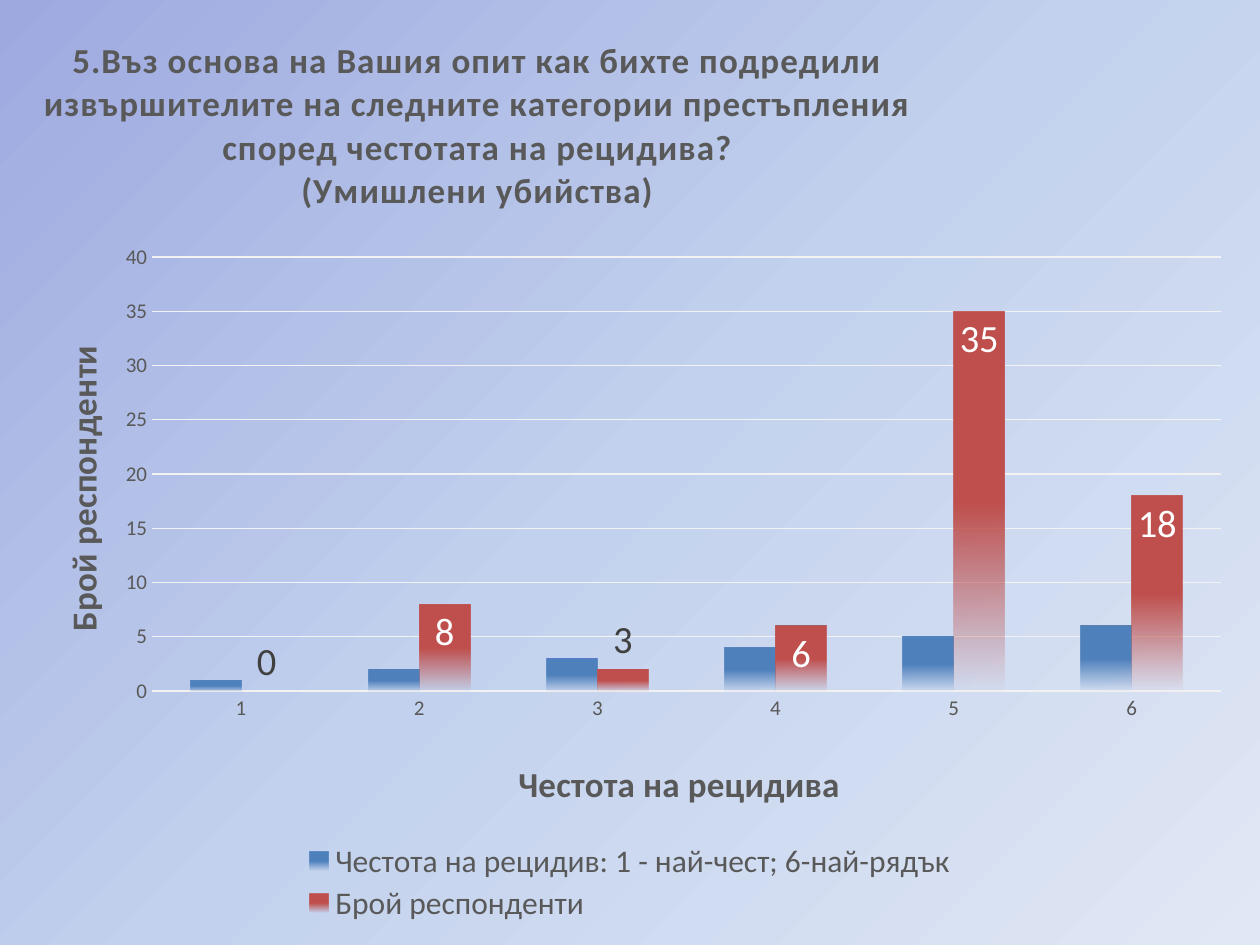
from typing import NamedTuple

from lxml import etree
from pptx import Presentation
from pptx.chart.data import CategoryChartData
from pptx.dml.color import RGBColor
from pptx.enum.chart import XL_CHART_TYPE, XL_LABEL_POSITION, XL_LEGEND_POSITION, XL_TICK_MARK
from pptx.oxml import parse_xml
from pptx.oxml.ns import qn
from pptx.util import Emu, Pt

PX = 914400 // 126
FONT = "Calibri"
COLORS = {
    "bg_start": "9EA9E0", "bg_mid": "C2D1ED", "bg_end": "E1E8F5",
    "blue": "4F81BD", "red": "C0504D", "text": "595959",
    "label": "404040", "white": "FFFFFF", "grid": "F2F2F2",
}


class Box(NamedTuple):
    x: int
    y: int
    w: int = 0
    h: int = 0


class Stop(NamedTuple):
    pos: int
    color: str
    alpha: int = 100


class Series(NamedTuple):
    name: str
    values: tuple[int, ...]
    color: str


CHART = Box(15, 16, 1230, 912)
PLOT = Box(152, 257, 1069, 434)
LEGEND = Box(300, 838, 660, 88)
TITLE = Box(40, 33)
CAT_TITLE = Box(512, 753)
VAL_TITLE = Box(52, 339)
SERIES = (
    Series("Честота на рецидив: 1 - най-чест; 6-най-рядък", (1, 2, 3, 4, 5, 6), "blue"),
    Series("Брой респонденти", (0, 8, 2, 6, 35, 18), "red"),
)
TITLE_LINES = (
    "5.Въз основа на Вашия опит как бихте подредили извършителите на следните "
    "категории престъпления според честотата на рецидива?",
    "(Умишлени убийства)",
)


def style(font, size: int, color: str, bold: bool = False) -> None:
    font.name = FONT
    font.size = Pt(size)
    font.bold = bold
    font.color.rgb = RGBColor.from_string(COLORS[color])


def gradient(parent, stops: tuple[Stop, ...], angle: int) -> None:
    gs = "".join(
        f'<a:gs pos="{t.pos * 1000}"><a:srgbClr val="{COLORS[t.color]}">'
        f'<a:alpha val="{t.alpha * 1000}"/></a:srgbClr></a:gs>'
        for t in stops
    )
    fill = parse_xml(
        '<a:gradFill xmlns:a="http://schemas.openxmlformats.org/drawingml/2006/main" '
        f'rotWithShape="1"><a:gsLst>{gs}</a:gsLst>'
        f'<a:lin ang="{angle * 60000}" scaled="0"/></a:gradFill>'
    )
    parent.replace(parent.find(qn("a:solidFill")), fill)


def place(parent, box: Box, index: int = 0, inner: bool = False) -> None:
    layout = parent.find(qn("c:layout"))
    if layout is None:
        layout = etree.Element(qn("c:layout"))
        parent.insert(index, layout)
    for child in list(layout):
        layout.remove(child)
    manual = etree.SubElement(layout, qn("c:manualLayout"))
    values = {"layoutTarget": "inner"} if inner else {}
    values |= {"xMode": "edge", "yMode": "edge"}
    values |= {"x": (box.x - CHART.x) / CHART.w, "y": (box.y - CHART.y) / CHART.h}
    if box.w:
        values |= {"w": box.w / CHART.w, "h": box.h / CHART.h}
    for tag, value in values.items():
        text = value if isinstance(value, str) else f"{value:.4f}"
        etree.SubElement(manual, qn(f"c:{tag}")).set("val", text)


def add_title(title, lines: tuple[str, ...], box: Box, spacing: int = 0) -> None:
    tf = title.text_frame
    tf.text = "\n".join(lines)
    for p in tf.paragraphs:
        style(p.font, 20, "text", True)
        if spacing:
            p.font._element.set("spc", str(spacing))
    place(title._element, box)


def format_axis(axis, title: str, box: Box) -> None:
    axis.major_tick_mark = XL_TICK_MARK.NONE
    axis.minor_tick_mark = XL_TICK_MARK.NONE
    axis.format.line.fill.background()
    style(axis.tick_labels.font, 12, "text")
    add_title(axis.axis_title, (title,), box)


def add_labels(series) -> None:
    labels = series.data_labels
    labels.show_value = True
    labels.position = XL_LABEL_POSITION.OUTSIDE_END
    style(labels.font, 22, "label")
    for i in (1, 3, 4, 5):
        label = series.points[i].data_label
        style(label.font, 22, "white")
        label.position = XL_LABEL_POSITION.INSIDE_END
    label = series.points[2].data_label
    r = label.text_frame.paragraphs[0].add_run()
    r.text = "3"
    style(r.font, 22, "label")
    label.position = XL_LABEL_POSITION.OUTSIDE_END


def add_frequency_chart(s) -> None:
    data = CategoryChartData()
    data.categories = [str(n) for n in range(1, 7)]
    for item in SERIES:
        data.add_series(item.name, item.values)
    chart = s.shapes.add_chart(
        XL_CHART_TYPE.COLUMN_CLUSTERED, *(Emu(v * PX) for v in CHART), data
    ).chart
    style(chart.font, 10, "text")
    add_title(chart.chart_title, TITLE_LINES, TITLE, 50)

    plot = chart.plots[0]
    plot.gap_width = 150
    plot.overlap = 0
    plot.vary_by_categories = False
    for series, item in zip(plot.series, SERIES):
        series.format.fill.solid()
        stops = (Stop(0, item.color), Stop(50, item.color), Stop(100, item.color, 0))
        gradient(series._element.spPr, stops, 90)
    add_labels(plot.series[1])

    format_axis(chart.category_axis, "Честота на рецидива", CAT_TITLE)
    axis = chart.value_axis
    format_axis(axis, "Брой респонденти", VAL_TITLE)
    axis.minimum_scale, axis.maximum_scale, axis.major_unit = 0, 40, 5
    line = axis.major_gridlines.format.line
    line.width = Pt(0.75)
    line.color.rgb = RGBColor.from_string(COLORS["grid"])

    chart.has_legend = True
    legend = chart.legend
    legend.position = XL_LEGEND_POSITION.BOTTOM
    legend.include_in_layout = False
    style(legend.font, 18, "text")
    place(legend._element, LEGEND, 1)
    place(chart._chartSpace.chart.plotArea, PLOT, inner=True)


def main() -> None:
    prs = Presentation()
    prs.slide_width, prs.slide_height = Emu(1260 * PX), Emu(945 * PX)
    s = prs.slides.add_slide(prs.slide_layouts[6])
    s.background.fill.solid()
    stops = (Stop(0, "bg_start"), Stop(50, "bg_mid"), Stop(100, "bg_end"))
    gradient(s._element.cSld.bg.bgPr, stops, 45)
    add_frequency_chart(s)
    prs.save("out.pptx")


if __name__ == "__main__":
    main()
